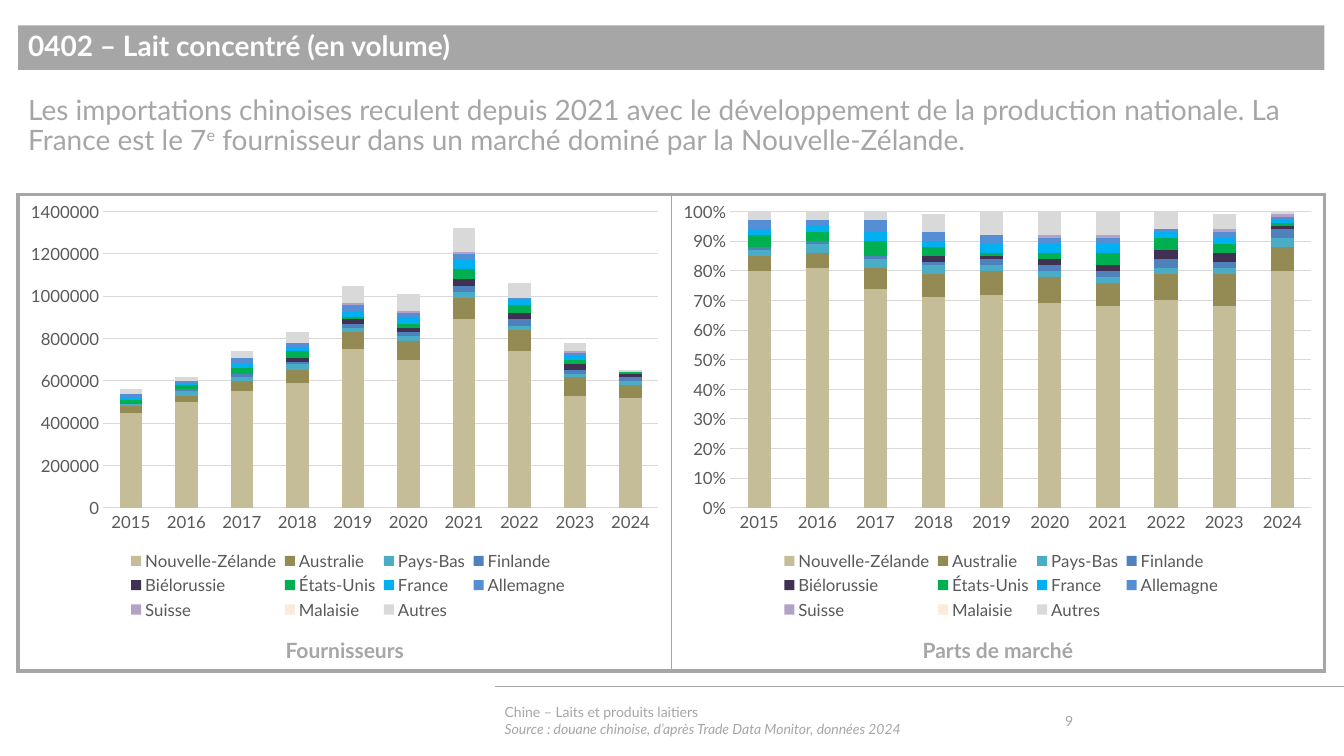
import pptx
import pptx.chart.data
import pptx.dml.color
import pptx.enum.chart
import pptx.enum.shapes
import pptx.enum.text
import pptx.oxml
import pptx.oxml.ns
import pptx.util
from pptx.util import Cm, Pt

FONT = "Lato"
GREY, LIGHT, DARK = "A6A6A6", "D9D9D9", "595959"
LEFT, TOP, HALF = 0.46, 4.9, 16.46
YEARS = [str(year) for year in range(2015, 2025)]

# Supplier: colour, volumes (thousand tonnes step of 10 000), shares (%)
SUPPLIERS = {
    "Nouvelle-Zélande": ("C4BD97", [45, 50, 55, 59, 75, 70, 89, 74, 53, 52],
                         [80, 81, 74, 71, 72, 69, 68, 70, 68, 80]),
    "Australie": ("948A54", [3, 3, 5, 6, 8, 9, 10, 10, 9, 6],
                  [5, 5, 7, 8, 8, 9, 8, 9, 11, 8]),
    "Pays-Bas": ("4BACC6", [1, 2, 2, 3, 2, 2, 3, 2, 1, 2],
                 [2, 3, 3, 3, 2, 2, 2, 2, 2, 3]),
    "Finlande": ("4F81BD", [0, 1, 1, 1, 2, 2, 3, 3, 2, 2],
                 [1, 1, 1, 1, 2, 2, 2, 3, 2, 3]),
    "Biélorussie": ("403152", [0, 0, 0, 2, 2, 2, 3, 3, 3, 1],
                    [0, 0, 0, 2, 1, 2, 2, 3, 3, 1]),
    "États-Unis": ("00B050", [2, 2, 3, 3, 1, 2, 5, 4, 2, 1],
                   [4, 3, 5, 3, 1, 2, 4, 4, 3, 1]),
    "France": ("00B0F0", [1, 1, 2, 2, 3, 3, 4, 2, 2, 0],
               [2, 2, 3, 2, 3, 3, 3, 2, 2, 1]),
    "Allemagne": ("558ED5", [2, 1, 3, 2, 3, 2, 3, 1, 1, 0],
                  [3, 2, 4, 3, 3, 2, 2, 1, 2, 1]),
    "Suisse": ("B3A2C7", [0, 0, 0, 0, 1, 1, 1, 0, 1, 0],
               [0, 0, 0, 0, 0, 1, 1, 0, 1, 1]),
    "Malaisie": ("FDEADA", [0] * 10, [0] * 10),
    "Autres": (LIGHT, [2, 2, 3, 5, 8, 8, 11, 7, 4, 1],
               [3, 4, 3, 6, 8, 8, 9, 7, 5, 2]),
}


def rgb(color):
    return pptx.dml.color.RGBColor.from_string(color)


def style(font, size, color, bold=False, italic=False):
    font.name, font.size, font.bold, font.italic = FONT, Pt(size), bold, italic
    font.color.rgb = rgb(color)


def add_text(s, box, lines, size, color=GREY, bold=False, fill=None,
             centered=False, middle=False, spacing=None):
    """Each line is a list of (text, variant) runs."""
    box = [Cm(v) for v in box]
    if fill:
        sp = s.shapes.add_shape(pptx.enum.shapes.MSO_SHAPE.RECTANGLE, *box)
        sp.shadow.inherit = False
        sp.fill.solid()
        sp.fill.fore_color.rgb = rgb(fill)
        sp.line.fill.background()
    else:
        sp = s.shapes.add_textbox(*box)
    tf = sp.text_frame
    tf.word_wrap = True
    anchor = pptx.enum.text.MSO_ANCHOR
    tf.vertical_anchor = anchor.MIDDLE if middle else anchor.TOP
    align = pptx.enum.text.PP_ALIGN
    for i, runs in enumerate(lines):
        p = tf.add_paragraph() if i else tf.paragraphs[0]
        p.alignment = align.CENTER if centered else align.LEFT
        if spacing:
            p.line_spacing = spacing
        for text, variant in runs:
            r = p.add_run()
            r.text = text
            style(r.font, size, color, bold, variant == "italic")
            if variant == "super":
                r._r.get_or_add_rPr().set("baseline", "30000")


def add_rule(s, x1, x2, y):
    line = s.shapes.add_connector(pptx.enum.shapes.MSO_CONNECTOR.STRAIGHT,
                                  Cm(x1), Cm(y), Cm(x2), Cm(y))
    line.line.color.rgb = rgb(GREY)
    line.line.width = Pt(0.5)
    line._element.spPr.append(pptx.oxml.parse_xml(
        f'<a:effectLst {pptx.oxml.ns.nsdecls("a")}/>'))


def add_frame(s, height):
    table = s.shapes.add_table(1, 2, Cm(LEFT), Cm(TOP), Cm(2 * HALF),
                               Cm(height)).table
    table.first_row = table.horz_banding = False
    for col, cell in enumerate(table.iter_cells()):
        cell.fill.background()
        widths = {"lnL": 1 if col else 3, "lnR": 3 if col else 1,
                  "lnT": 3, "lnB": 3}
        # Borders come before the fill in the cell properties
        for i, (tag, width) in enumerate(widths.items()):
            cell._tc.get_or_add_tcPr().insert(i, pptx.oxml.parse_xml(
                f'<a:{tag} {pptx.oxml.ns.nsdecls("a")} w="{Pt(width)}">'
                f'<a:solidFill><a:srgbClr val="{GREY}"/></a:solidFill>'
                f'</a:{tag}>'))


def layout_xml(x, y, w, h, inner=False):
    target = '<c:layoutTarget val="inner"/>' if inner else ""
    return pptx.oxml.parse_xml(
        f'<c:layout {pptx.oxml.ns.nsdecls("c")}><c:manualLayout>{target}'
        f'<c:xMode val="edge"/><c:yMode val="edge"/><c:x val="{x}"/>'
        f'<c:y val="{y}"/><c:w val="{w}"/><c:h val="{h}"/>'
        '</c:manualLayout></c:layout>')


def set_layout(element, layout, after=None):
    for old in element.findall(pptx.oxml.ns.qn("c:layout")):
        element.remove(old)
    if after is None:
        element.insert(0, layout)
    else:
        after.addnext(layout)


def add_stacked_chart(s, x, column, factor, fmt, top, step, plot_x, plot_w):
    data = pptx.chart.data.CategoryChartData(number_format=fmt)
    data.categories = YEARS
    for name, supplier in SUPPLIERS.items():
        data.add_series(name, [round(v * factor, 2) for v in supplier[column]])
    chart = s.shapes.add_chart(
        pptx.enum.chart.XL_CHART_TYPE.COLUMN_STACKED,
        Cm(x), Cm(TOP), Cm(HALF), Cm(10.82), data).chart
    style(chart.font, 12, DARK)
    chart.has_title = False

    # Columns
    plot = chart.plots[0]
    plot.gap_width, plot.overlap = 150, 100
    plot.vary_by_categories = False
    for series in plot.series:
        series.format.fill.solid()
        series.format.fill.fore_color.rgb = rgb(SUPPLIERS[series.name][0])

    # Axes
    cat, val = chart.category_axis, chart.value_axis
    for axis in (cat, val):
        axis.major_tick_mark = pptx.enum.chart.XL_TICK_MARK.NONE
        style(axis.tick_labels.font, 12, DARK)
    val.minimum_scale, val.maximum_scale, val.major_unit = 0, top, step
    val.tick_labels.number_format = fmt
    val.tick_labels.number_format_is_linked = False
    val.format.line.fill.background()
    val.has_major_gridlines = True
    for line in (cat.format.line, val.major_gridlines.format.line):
        line.color.rgb = rgb(LIGHT)
        line.width = Pt(0.75)

    # Legend and plot area
    chart.has_legend = True
    legend = chart.legend
    legend.position = pptx.enum.chart.XL_LEGEND_POSITION.BOTTOM
    legend.include_in_layout = False
    style(legend.font, 12, DARK)
    set_layout(legend._element, layout_xml(0.16, 0.82, 0.69, 0.18),
               legend._element.find(pptx.oxml.ns.qn("c:legendPos")))
    set_layout(plot._element.getparent(),
               layout_xml(plot_x, 0.04, plot_w, 0.69, inner=True))


def main():
    prs = pptx.Presentation()
    prs.slide_width, prs.slide_height = Cm(33.87), Cm(19.05)
    s = prs.slides.add_slide(prs.slide_layouts[6])

    # Frame and captions
    add_rule(s, 12.47, 33.87, 17.3)
    add_frame(s, 12.01)
    for i, caption in enumerate(["Fournisseurs", "Parts de marché"]):
        add_text(s, (LEFT + i * HALF, 15.93, HALF, 0.9), [[(caption, None)]],
                 15, bold=True, centered=True)

    # Footer
    add_text(s, (12.47, 17.65, 13.79, 1.02),
             [[("Chine – Laits et produits laitiers", None)],
              [("Source : douane chinoise, d’après Trade Data Monitor, "
                "données 2024", "italic")]], 10, middle=True)
    add_text(s, (26.59, 17.65, 2.51, 1.02), [[("9", None)]], 10, middle=True)

    # Title and key message
    add_text(s, (LEFT, 0.64, 2 * HALF, 1.12),
             [[("0402 – Lait concentré (en volume)", None)]], 20, "FFFFFF",
             bold=True, fill=GREY, middle=True, spacing=0.9)
    add_text(s, (LEFT, 2.29, 2 * HALF, 2.06),
             [[("Les importations chinoises reculent depuis 2021 avec le "
                "développement de la production nationale. La France est "
                "le 7", None), ("e", "super"),
               (" fournisseur dans un marché dominé par la "
                "Nouvelle-Zélande.", None)]], 20, spacing=0.9)

    # Charts
    add_stacked_chart(s, LEFT, 1, 10000, "General", 1400000, 200000, 0.13, 0.85)
    add_stacked_chart(s, LEFT + HALF, 2, 0.01, "0%", 1, 0.1, 0.09, 0.89)
    prs.save("out.pptx")


if __name__ == "__main__":
    main()
